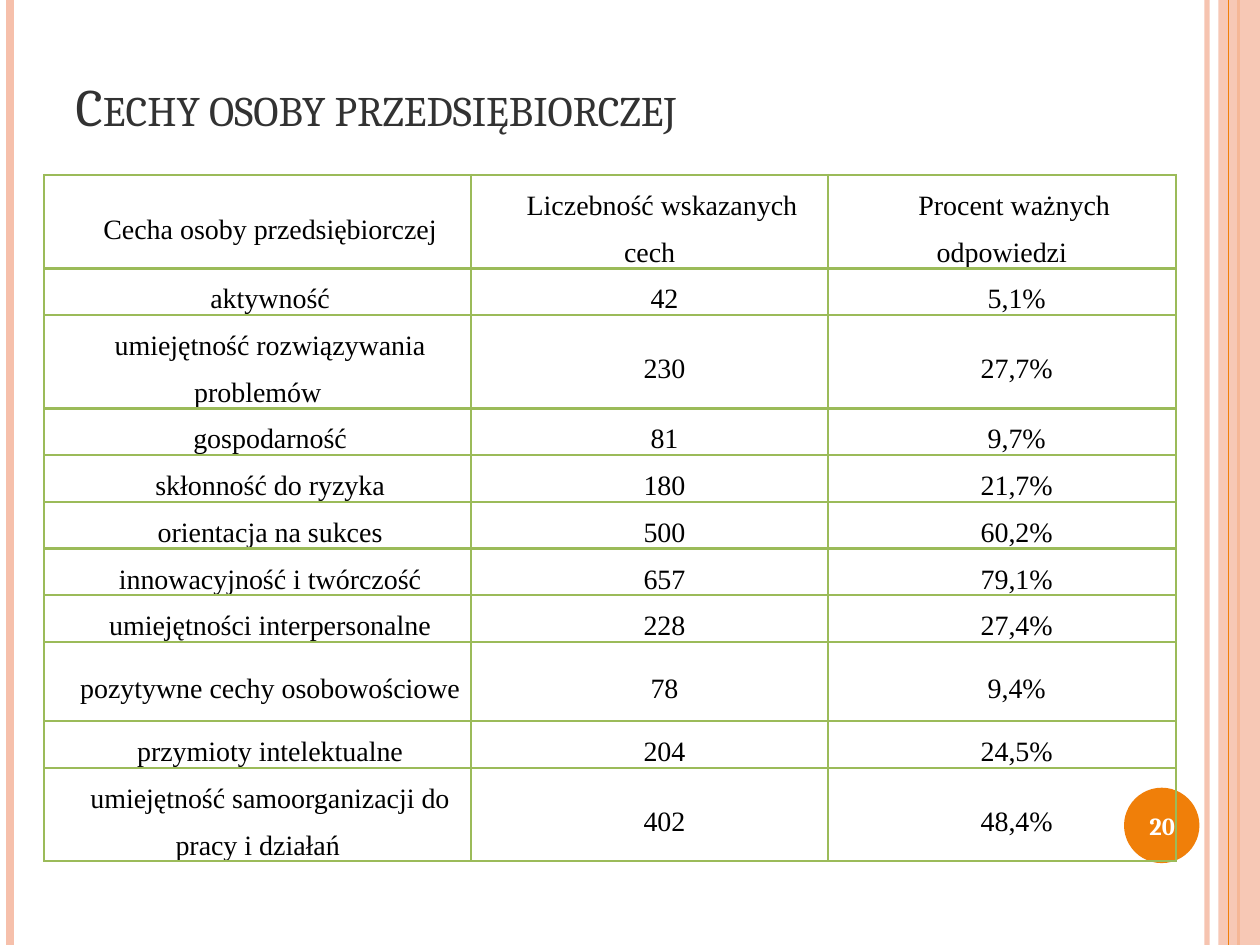
"""Build the slide listing the traits of an enterprising person."""
from dataclasses import dataclass

import pptx
import pptx.dml.color
import pptx.enum.shapes
import pptx.enum.text
import pptx.oxml
import pptx.oxml.ns
import pptx.util
from lxml import etree
from pptx.dml.color import RGBColor
from pptx.enum.shapes import MSO_CONNECTOR, MSO_SHAPE
from pptx.enum.text import MSO_ANCHOR, MSO_AUTO_SIZE, PP_ALIGN
from pptx.util import Cm

ORANGE = RGBColor(0xF0, 0x7F, 0x09)
PEACH = RGBColor(0xF6, 0xC0, 0xAB)
GREEN = RGBColor(0x9B, 0xBB, 0x59)
CHARCOAL = RGBColor(0x32, 0x32, 0x32)
BLACK = RGBColor(0, 0, 0)
WHITE = RGBColor(0xFF, 0xFF, 0xFF)

SLIDE_WIDTH, SLIDE_HEIGHT = Cm(25.4), Cm(19.05)
COLUMN_WIDTHS = (8.61, 7.19, 7.01)
HEADER = ("Cecha osoby przedsiębiorczej", "Liczebność wskazanych cech", "Procent ważnych odpowiedzi")
HEADER_HEIGHT, SINGLE, DOUBLE = 1.75, 0.81, 1.6


@dataclass
class Stripe:
    """Vertical decorative line with its position in centimetres."""
    x: float
    color: RGBColor
    width: float
    opacity: int = 100


@dataclass
class Trait:
    """Table row describing one trait."""
    name: str
    count: str
    percent: str
    height: float = SINGLE


STRIPES = (
    Stripe(24.33, PEACH, 3, 93),
    Stripe(0.2, PEACH, 4.5),
    Stripe(24.97, ORANGE, 1.5),
)
INNER_STRIPE = Stripe(24.77, ORANGE, 0.75)

TRAITS = (
    Trait("aktywność", "42", "5,1%"),
    Trait("umiejętność rozwiązywania problemów", "230", "27,7%", DOUBLE),
    Trait("gospodarność", "81", "9,7%"),
    Trait("skłonność do ryzyka", "180", "21,7%"),
    Trait("orientacja na sukces", "500", "60,2%"),
    Trait("innowacyjność i twórczość", "657", "79,1%"),
    Trait("umiejętności interpersonalne", "228", "27,4%"),
    Trait("pozytywne cechy osobowościowe", "78", "9,4%", DOUBLE),
    Trait("przymioty intelektualne", "204", "24,5%"),
    Trait("umiejętność samoorganizacji do pracy i działań", "402", "48,4%", DOUBLE),
)


def write_text(frame, text: str, *, font: str, size: float, color: RGBColor,
               align=PP_ALIGN.CENTER, bold: bool = False, small_caps: bool = False,
               spacing: float = 1.0, margin: float = 0, indent: float = 0) -> None:
    """Fill a text frame with one formatted paragraph."""
    frame.word_wrap = True
    paragraph = frame.paragraphs[0]
    paragraph.alignment = align
    paragraph.line_spacing = spacing
    properties = paragraph._p.get_or_add_pPr()
    properties.set("marL", str(Cm(margin)))
    properties.set("indent", str(Cm(indent)))
    run = paragraph.add_run()
    run.text = text
    run.font.name = font
    run.font.size = pptx.util.Pt(size)
    run.font.bold = bold
    run.font.color.rgb = color
    if small_caps:
        run._r.get_or_add_rPr().set("cap", "small")


def set_opacity(properties, percent: int) -> None:
    """Set the opacity of the solid colour inside a properties element."""
    color = properties.find(".//" + pptx.oxml.ns.qn("a:srgbClr"))
    etree.SubElement(color, pptx.oxml.ns.qn("a:alpha")).set("val", str(percent * 1000))


def add_stripe(slide, stripe: Stripe) -> None:
    """Draw a line over the full slide height."""
    x = Cm(stripe.x)
    line = slide.shapes.add_connector(MSO_CONNECTOR.STRAIGHT, x, 0, x, SLIDE_HEIGHT)
    line.line.color.rgb = stripe.color
    line.line.width = pptx.util.Pt(stripe.width)
    properties = line._element.spPr
    if stripe.opacity < 100:
        set_opacity(properties, stripe.opacity)
    etree.SubElement(properties, pptx.oxml.ns.qn("a:effectLst"))


def add_filled_shape(slide, kind, left: float, top: float, width: float, height: float,
                     color: RGBColor):
    """Draw a borderless shape placed in centimetres."""
    shape = slide.shapes.add_shape(kind, Cm(left), Cm(top), Cm(width), Cm(height))
    shape.shadow.inherit = False
    shape.fill.solid()
    shape.fill.fore_color.rgb = color
    shape.line.fill.background()
    return shape


def set_borders(cell, color: RGBColor, width: float) -> None:
    """Draw the four borders of a table cell."""
    properties = cell._tc.get_or_add_tcPr()
    for side in ("lnL", "lnR", "lnT", "lnB"):
        border = etree.SubElement(properties, pptx.oxml.ns.qn(f"a:{side}"))
        border.set("w", str(pptx.util.Pt(width)))
        fill = etree.SubElement(border, pptx.oxml.ns.qn("a:solidFill"))
        etree.SubElement(fill, pptx.oxml.ns.qn("a:srgbClr")).set("val", str(color))


def fill_cell(cell, text: str, margin: float) -> None:
    """Format one table cell and write its text."""
    set_borders(cell, GREEN, 1.5)
    cell.fill.background()
    cell.vertical_anchor = MSO_ANCHOR.MIDDLE
    cell.margin_left = cell.margin_right = Cm(0.18)
    cell.margin_top = cell.margin_bottom = 0
    write_text(cell.text_frame, text, font="Times New Roman", size=16, color=BLACK,
               spacing=1.5, margin=margin, indent=0.5)


def add_trait_table(slide) -> None:
    """Add the table of traits with its header row."""
    heights = [HEADER_HEIGHT] + [trait.height for trait in TRAITS]
    rows = [HEADER] + [(trait.name, trait.count, trait.percent) for trait in TRAITS]
    table = slide.shapes.add_table(len(rows), len(HEADER), Cm(0.89), Cm(3.53),
                                   Cm(sum(COLUMN_WIDTHS)), Cm(sum(heights))).table
    table.first_row = table.horz_banding = False
    for column, width in zip(table.columns, COLUMN_WIDTHS):
        column.width = Cm(width)
    for row_index, (height, texts) in enumerate(zip(heights, rows)):
        table.rows[row_index].height = Cm(height)
        for column_index, text in enumerate(texts):
            margin = 0.1 if row_index and column_index else 0
            fill_cell(table.cell(row_index, column_index), text, margin)


def add_title(slide) -> None:
    """Place and format the title placeholder."""
    title = slide.shapes.title
    title.left, title.top, title.width, title.height = Cm(1.27), Cm(-0.28), Cm(20.75), Cm(3.18)
    title.text_frame.auto_size = MSO_AUTO_SIZE.NONE
    title.text_frame.vertical_anchor = MSO_ANCHOR.BOTTOM
    write_text(title.text_frame, "Cechy osoby przedsiębiorczej", font="Cambria", size=30,
               color=CHARCOAL, align=PP_ALIGN.LEFT, small_caps=True)


def add_page_number(slide) -> None:
    """Write the page number over the orange circle."""
    box = slide.shapes.add_textbox(Cm(22.58), Cm(15.93), Cm(1.7), Cm(1.45))
    box.text_frame.vertical_anchor = MSO_ANCHOR.MIDDLE
    write_text(box.text_frame, "20", font="Cambria", size=14, color=WHITE, bold=True)


def main() -> None:
    """Build and save the presentation."""
    presentation = pptx.Presentation()
    presentation.slide_width, presentation.slide_height = SLIDE_WIDTH, SLIDE_HEIGHT
    slide = presentation.slides.add_slide(presentation.slide_layouts[5])
    for stripe in STRIPES:
        add_stripe(slide, stripe)
    band = add_filled_shape(slide, MSO_SHAPE.RECTANGLE, 24.56, 0, 0.84, 19.05, PEACH)
    set_opacity(band._element.spPr, 87)
    add_stripe(slide, INNER_STRIPE)
    add_filled_shape(slide, MSO_SHAPE.OVAL, 22.66, 15.88, 1.52, 1.52, ORANGE)
    add_title(slide)
    add_trait_table(slide)
    add_page_number(slide)
    presentation.save("out.pptx")


if __name__ == "__main__":
    main()
